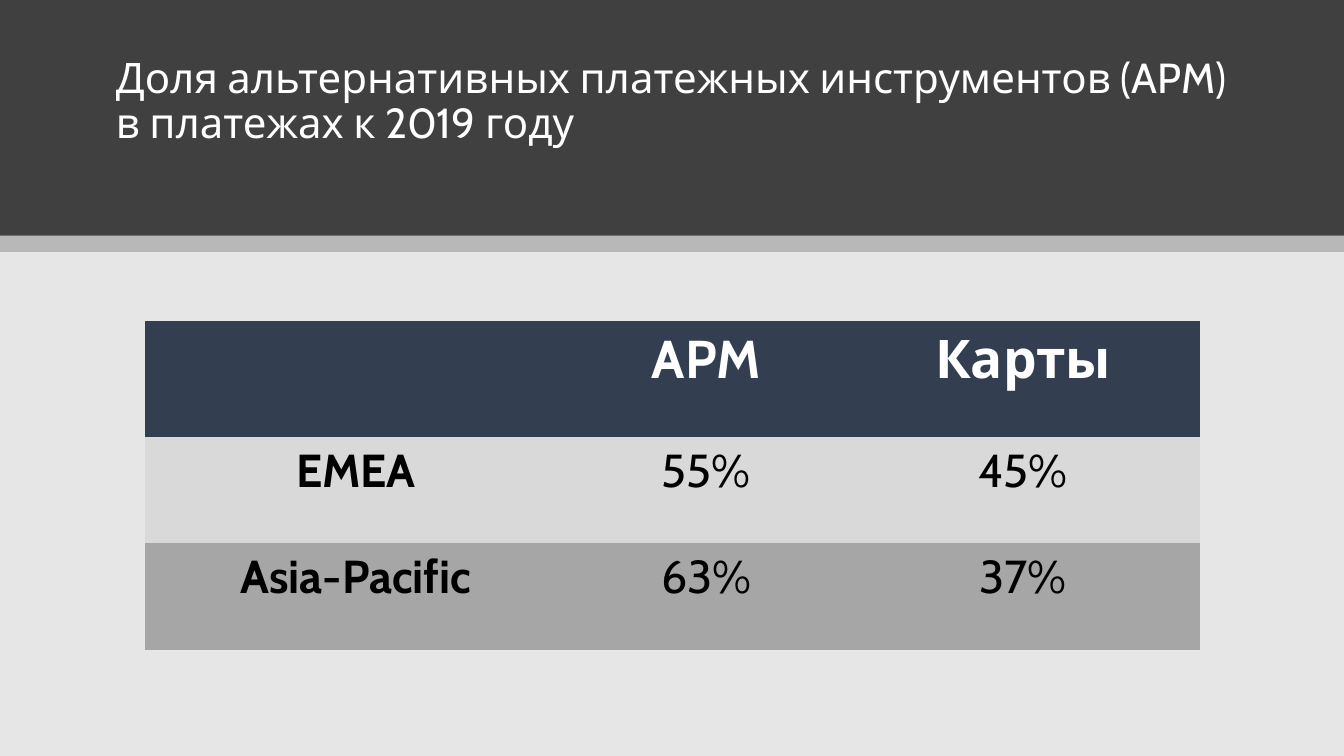
from lxml.etree import SubElement
from pptx import Presentation
from pptx.dml.color import RGBColor
from pptx.enum.shapes import MSO_SHAPE
from pptx.enum.text import MSO_ANCHOR, PP_ALIGN
from pptx.oxml.ns import qn
from pptx.util import Cm, Pt

# Content
TITLE = "Доля альтернативных платежных инструментов (APM) в платежах к 2019 году"
ROWS = [
    ("", "APM", "Карты"),
    ("EMEA", "55%", "45%"),
    ("Asia-Pacific", "63%", "37%"),
]

# Style
FONT = "Cabin"
WHITE = RGBColor(0xFF, 0xFF, 0xFF)
BLACK = RGBColor(0x00, 0x00, 0x00)
BACKDROP = RGBColor(0xE7, 0xE6, 0xE6)
CHARCOAL = RGBColor(0x40, 0x40, 0x40)
NAVY = RGBColor(0x33, 0x3F, 0x50)
LIGHT_GREY = RGBColor(0xD9, 0xD9, 0xD9)
MID_GREY = RGBColor(0xA6, 0xA6, 0xA6)
ROW_FILLS = [NAVY, LIGHT_GREY, MID_GREY]

# Measures in centimetres
PAGE_W, PAGE_H = 33.87, 19.05
BANNER_H, STRIPE_H = 5.94, 0.41
COLUMN_WIDTHS = [10.62, 7.04, 8.92]
ROW_HEIGHTS = [2.9, 2.69, 2.69]


def add_band(page, top, height, color, opacity=100):
    band = page.shapes.add_shape(
        MSO_SHAPE.RECTANGLE, 0, Cm(top), Cm(PAGE_W), Cm(height))
    band.shadow.inherit = False
    band.line.fill.background()
    band.fill.solid()
    band.fill.fore_color.rgb = color
    if opacity < 100:
        tint = band.fill._xPr.find(".//" + qn("a:srgbClr"))
        SubElement(tint, qn("a:alpha"), val=str(opacity * 1000))


def add_span(para, text, size, color, bold=False):
    span = para.add_run()
    span.text = text
    span.font.name = FONT
    span.font.size = Pt(size)
    span.font.bold = bold
    span.font.color.rgb = color


def add_title(page):
    box = page.shapes.add_textbox(Cm(2.67), Cm(1.19), Cm(28.55), Cm(3.78))
    frame = box.text_frame
    frame.word_wrap = True
    frame.vertical_anchor = MSO_ANCHOR.TOP
    frame.margin_top = Cm(0.25)
    para = frame.paragraphs[0]
    para.line_spacing = 0.9
    add_span(para, TITLE, 30, WHITE)


def add_share_table(page):
    table = page.shapes.add_table(
        len(ROWS), len(COLUMN_WIDTHS), Cm(3.66), Cm(8.1),
        Cm(sum(COLUMN_WIDTHS)), Cm(sum(ROW_HEIGHTS))).table
    table.horz_banding = False
    for column, width in zip(table.columns, COLUMN_WIDTHS):
        column.width = Cm(width)
    for r, (row, height) in enumerate(zip(table.rows, ROW_HEIGHTS)):
        row.height = Cm(height)
        header = r == 0
        for c, (cell, text) in enumerate(zip(row.cells, ROWS[r])):
            cell.fill.solid()
            cell.fill.fore_color.rgb = ROW_FILLS[r]
            cell.margin_left = cell.margin_right = Cm(0.3)
            cell.margin_top = cell.margin_bottom = Cm(0.15)
            # Turn off the style's white grid
            properties = cell._tc.get_or_add_tcPr()
            for i, side in enumerate(("lnL", "lnR", "lnT", "lnB")):
                border = properties.makeelement(qn("a:" + side), {"w": "0"})
                SubElement(border, qn("a:noFill"))
                properties.insert(i, border)
            if text:
                para = cell.text_frame.paragraphs[0]
                para.alignment = PP_ALIGN.CENTER
                add_span(para, text, 38 if header else 33,
                         WHITE if header else BLACK, header or c == 0)


def main():
    deck = Presentation()
    deck.slide_width, deck.slide_height = Cm(PAGE_W), Cm(PAGE_H)
    page = deck.slides.add_slide(deck.slide_layouts[6])

    # Backdrop, banner and the stripe beneath it
    add_band(page, 0, PAGE_H, BACKDROP)
    add_band(page, 0, BANNER_H, CHARCOAL)
    add_band(page, BANNER_H, STRIPE_H, BLACK, opacity=20)

    add_title(page)
    add_share_table(page)
    deck.save("out.pptx")


if __name__ == "__main__":
    main()
